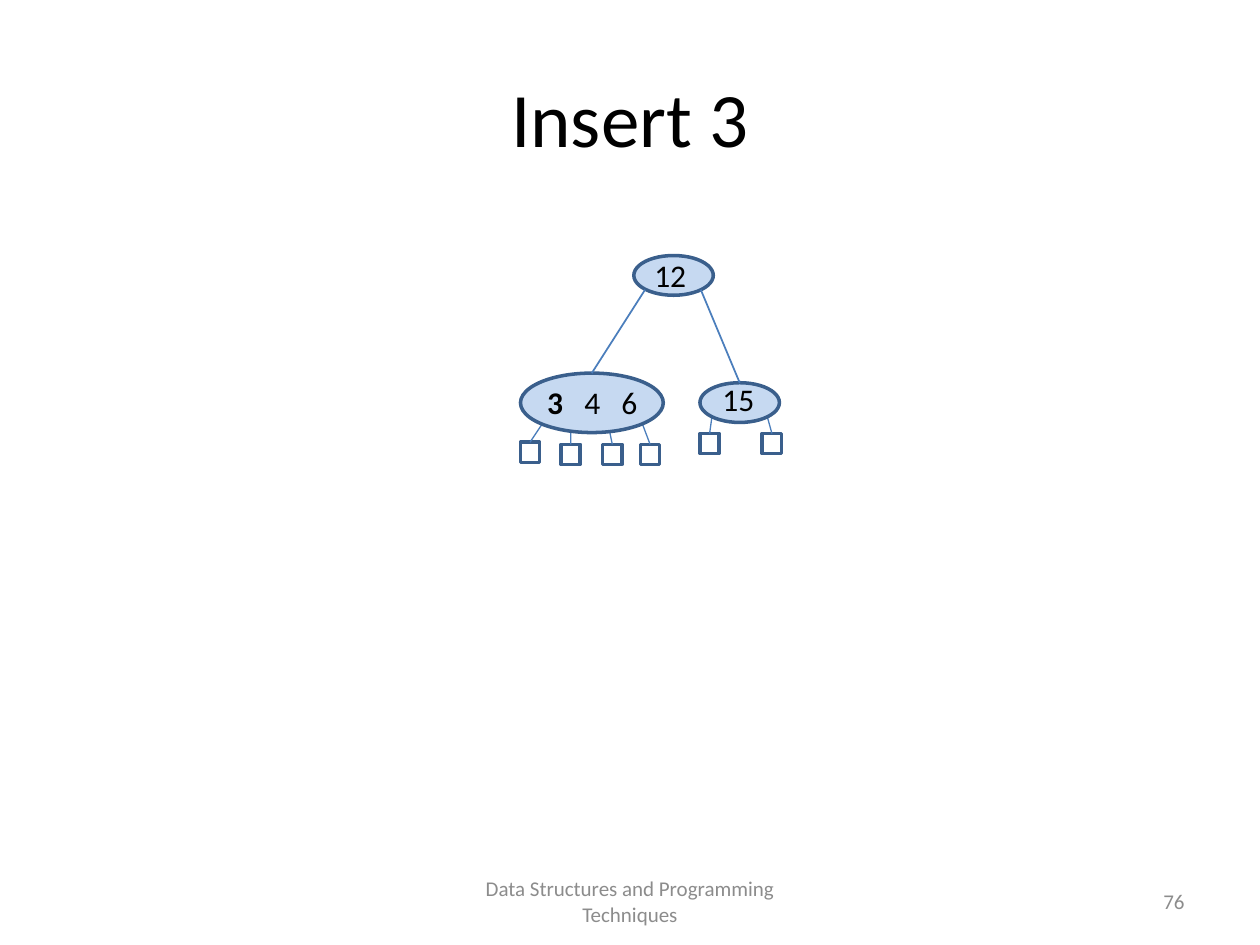
"""Build a slide showing a 2-3-4 tree after inserting the key 3."""
from lxml import etree
from pptx import Presentation
from pptx.dml.color import RGBColor
from pptx.enum import shapes, text
from pptx.oxml.ns import qn
from pptx.util import Pt

FILL, OUTLINE, EDGE = "C6D9F1", "3A5F8C", "4B7EBC"
BLACK, GREY = "000000", "8C8C8C"
LEAF_W, LEAF_H = 11, 11.5
KEY_GAP = 21.2


def color(value):
    return RGBColor.from_string(value)


def add_text(s, box, runs, size, ink=BLACK, align="CENTER", anchor="MIDDLE", inset=7.2):
    tb = s.shapes.add_textbox(*map(Pt, box))
    tf = tb.text_frame
    tf.word_wrap = True
    tf.vertical_anchor = text.MSO_ANCHOR[anchor]
    tf.margin_left = tf.margin_right = Pt(inset)
    p = tf.paragraphs[0]
    p.alignment = text.PP_ALIGN[align]
    p.font.name, p.font.size = "Calibri", Pt(size)
    p.font.color.rgb = color(ink)
    for content, bold in runs:
        r = p.add_run()
        r.text = content
        if bold:
            r.font.bold = True
    return p


def add_tab_stops(p, positions):
    tabs = etree.Element(qn("a:tabLst"))
    for pos in positions:
        etree.SubElement(tabs, qn("a:tab"), pos=str(Pt(pos)), algn="l")
    p._p.get_or_add_pPr().insert(0, tabs)


def add_outlined(s, kind, box, fill=None):
    sp = s.shapes.add_shape(shapes.MSO_SHAPE[kind], *map(Pt, box))
    sp.shadow.inherit = False
    if fill:
        sp.fill.solid()
        sp.fill.fore_color.rgb = color(fill)
    else:
        sp.fill.background()
    sp.line.color.rgb = color(OUTLINE)
    sp.line.width = Pt(2)
    return sp


def add_edge(s, start, child, width):
    x, y = map(Pt, start)
    cn = s.shapes.add_connector(shapes.MSO_CONNECTOR.STRAIGHT, x, y, x, y)
    cn.end_connect(child, 0)
    cn.line.color.rgb = color(EDGE)
    cn.line.width = Pt(width)
    etree.SubElement(cn._element.spPr, qn("a:effectLst"))


def add_node(s, box, leaves):
    for start, corner in leaves:
        leaf = add_outlined(s, "RECTANGLE", (*corner, LEAF_W, LEAF_H))
        add_edge(s, start, leaf, 0.75)
    return add_outlined(s, "OVAL", box, FILL)


def main():
    prs = Presentation()
    prs.slide_width, prs.slide_height = Pt(720), Pt(540)
    s = prs.slides.add_slide(prs.slide_layouts[6])

    add_text(s, (36, 21.6, 648, 90), [("Insert 3", False)], 44)
    add_text(s, (246, 500.5, 228, 28.8),
             [("Data Structures and Programming Techniques", False)], 12, GREY)
    add_text(s, (516, 500.5, 168, 28.8), [("76", False)], 12, GREY, "RIGHT")

    add_node(s, (362.2, 146, 45.4, 22.7), [])
    left = add_node(s, (297.4, 213.2, 81.6, 34), [
        ((309.6, 242.6), (297.4, 252.7)),
        ((326.2, 247.2), (320.6, 253.9)),
        ((348.5, 247.2), (344.4, 253.9)),
        ((367.2, 242.6), (366, 253.9)),
    ])
    right = add_node(s, (400, 218.7, 45.4, 22.7), [
        ((406.8, 238.3), (400, 247.7)),
        ((438.5, 238.3), (435.6, 247.7)),
    ])
    add_edge(s, (368.6, 165.6), left, 1)
    add_edge(s, (400.5, 165.6), right, 1)

    keys = add_text(s, (312.7, 215.3, 64, 29), [("3", True), ("\t4\t6", False)],
                    18, align="LEFT", anchor="TOP", inset=0)
    add_tab_stops(keys, [KEY_GAP, 2 * KEY_GAP])
    add_text(s, (363.6, 142.6, 38.9, 29), [("12", False)], 18, anchor="TOP")
    add_text(s, (402.5, 213.8, 38.9, 29), [("15", False)], 18, anchor="TOP")

    prs.save("out.pptx")


if __name__ == "__main__":
    main()
